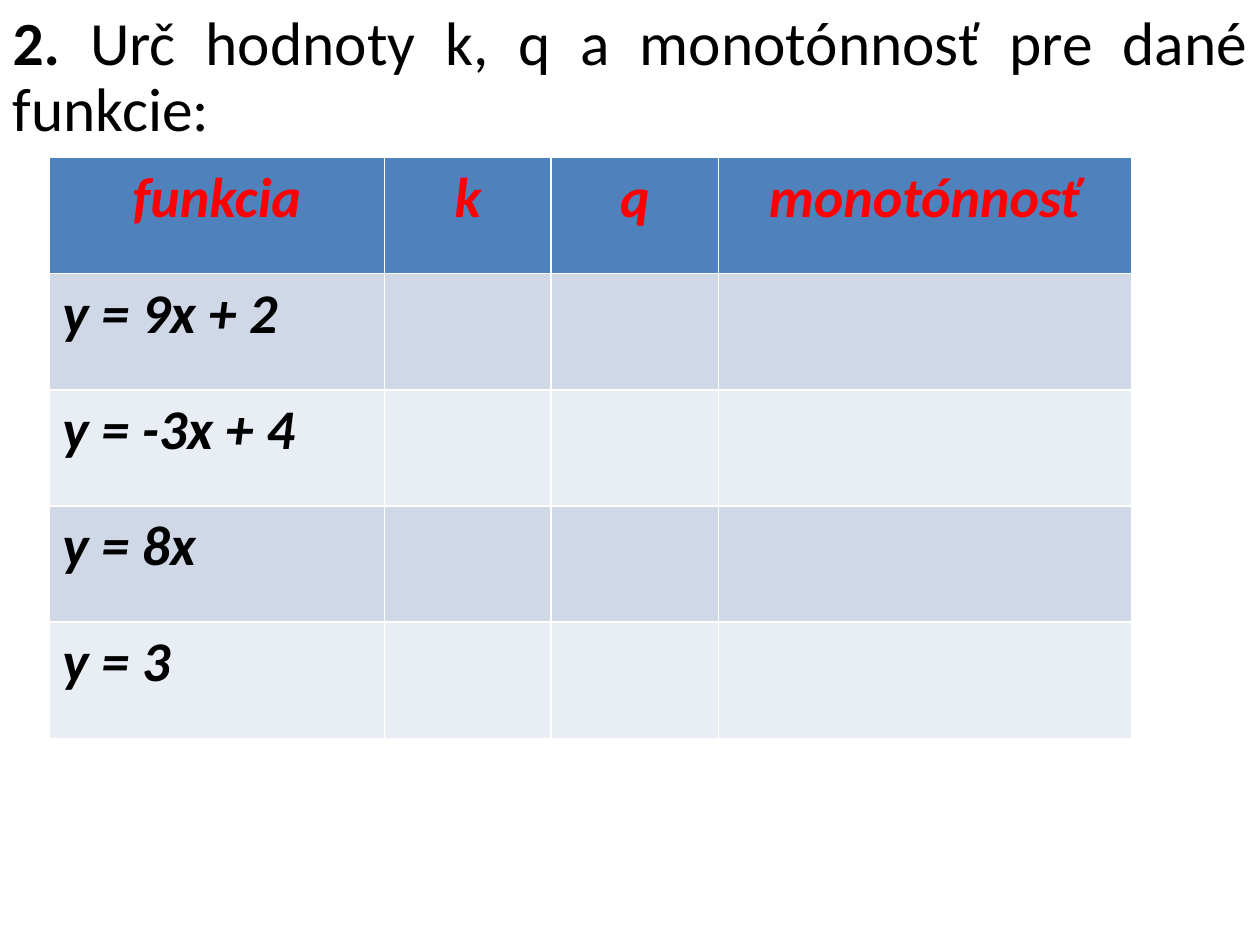
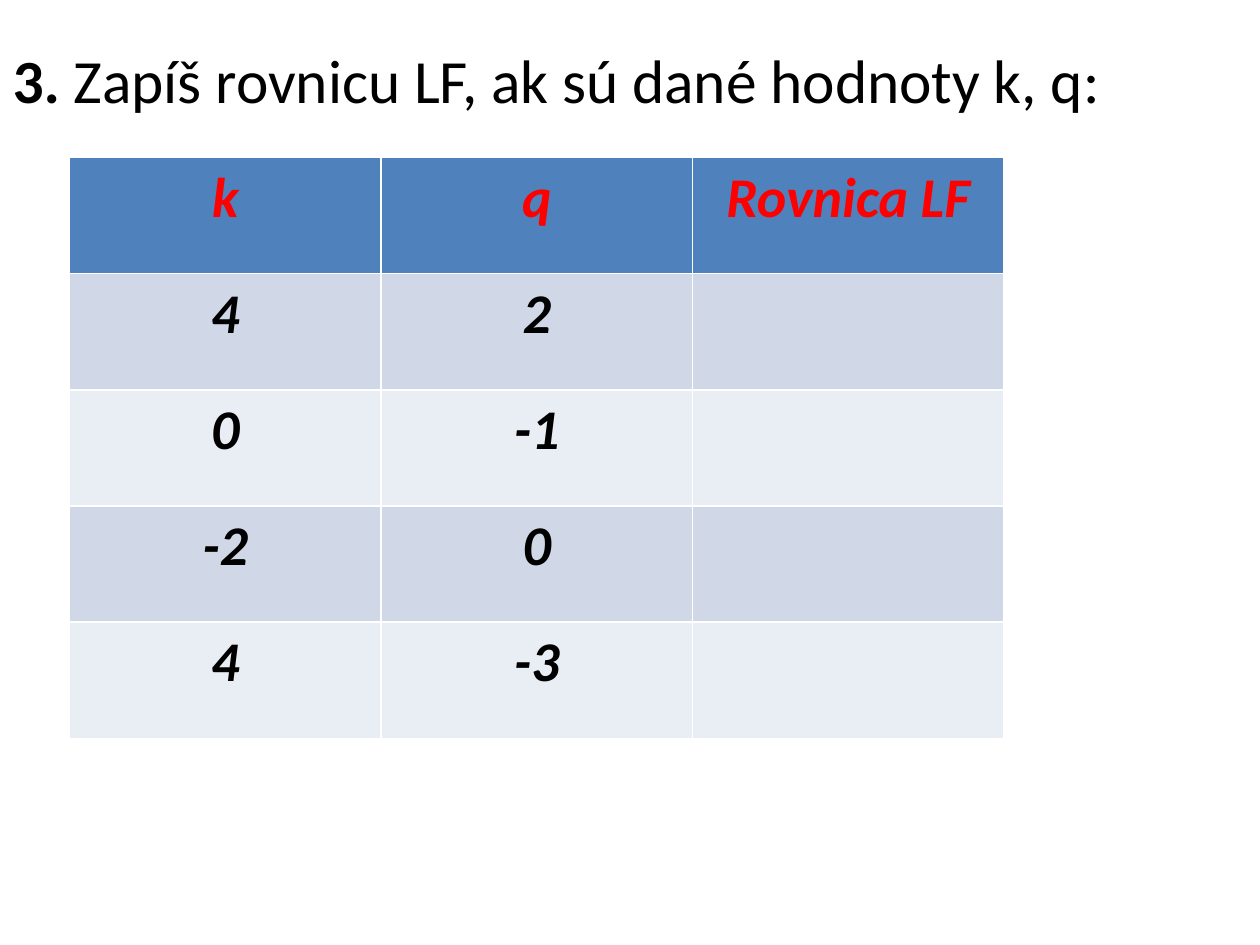
from pptx import Presentation
from pptx.dml.color import RGBColor
from pptx.enum.text import MSO_ANCHOR, MSO_AUTO_SIZE, PP_ALIGN
from pptx.util import Pt

FONT = "Calibri"
BLACK, RED = "000000", "FF0000"
HEAD, BANDS = "4F81BD", ("E9EDF4", "D0D8E8")
WIDTH, HEIGHT = 720, 540
TOP, ROW = 90, 66.4


def paint(target, color):
    """Colour a font, or a fill that is already solid."""
    part = target.fore_color if hasattr(target, "fore_color") else target.color
    part.rgb = RGBColor.from_string(color)


def style(font, size, color):
    font.name, font.size = FONT, Pt(size)
    paint(font, color)


def add_title(slide, number, text, spacing):
    title = slide.shapes.title
    title.left, title.top = Pt(0), Pt(0)
    title.width, title.height = Pt(WIDTH), Pt(TOP)
    frame = title.text_frame
    frame.word_wrap = True
    frame.auto_size = MSO_AUTO_SIZE.NONE
    frame.vertical_anchor = MSO_ANCHOR.MIDDLE
    para = frame.paragraphs[0]
    para.alignment, para.line_spacing = PP_ALIGN.JUSTIFY, spacing
    style(para.font, 35.1, BLACK)
    for words, bold in ((number + " ", True), (text, False)):
        run = para.add_run()
        run.text, run.font.bold = words, bold


def fill_cell(cell, text, back, color, align):
    cell.fill.solid()
    paint(cell.fill, back)
    if text:
        cell.text = text
        para = cell.text_frame.paragraphs[0]
        para.alignment = align
        style(para.font, 32, color)
        para.font.bold = para.font.italic = True


def add_grid(slide, left, widths, rows, align):
    """Add a table whose white rules come from the default table style."""
    frame = slide.shapes.add_table(len(rows), len(widths), Pt(left), Pt(TOP),
                                   Pt(sum(widths)), Pt(ROW * len(rows)))
    table = frame.table
    for column, width in zip(table.columns, widths):
        column.width = Pt(width)
    for r, row in enumerate(rows):
        table.rows[r].height = Pt(ROW)
        for c, text in enumerate(row):
            if r == 0:
                look = HEAD, RED, PP_ALIGN.CENTER
            else:
                look = BANDS[r % 2], BLACK, align
            fill_cell(table.cell(r, c), text, *look)


def main():
    deck = Presentation()
    deck.slide_width, deck.slide_height = Pt(WIDTH), Pt(HEIGHT)
    layout = deck.slide_layouts.get_by_name("Title Only")

    slide = deck.slides.add_slide(layout)
    add_title(slide, "2.", "Urč hodnoty k, q a monotónnosť pre dané funkcie:", 0.9)
    rules = ("y = 9x + 2", "y = -3x + 4", "y = 8x", "y = 3")
    add_grid(slide, 28.4, (191.2, 95.4, 95.6, 236.2),
             [("funkcia", "k", "q", "monotónnosť")]
             + [(rule, "", "", "") for rule in rules], PP_ALIGN.LEFT)

    slide = deck.slides.add_slide(layout)
    add_title(slide, "3.", "Zapíš rovnicu LF, ak sú dané hodnoty k, q:", 1.0)
    pairs = (("4", "2"), ("0", "-1"), ("-2", "0"), ("4", "-3"))
    add_grid(slide, 39.8, (178,) * 3,
             [("k", "q", "Rovnica LF")] + [(k, q, "") for k, q in pairs],
             PP_ALIGN.CENTER)

    deck.save("out.pptx")


if __name__ == "__main__":
    main()
